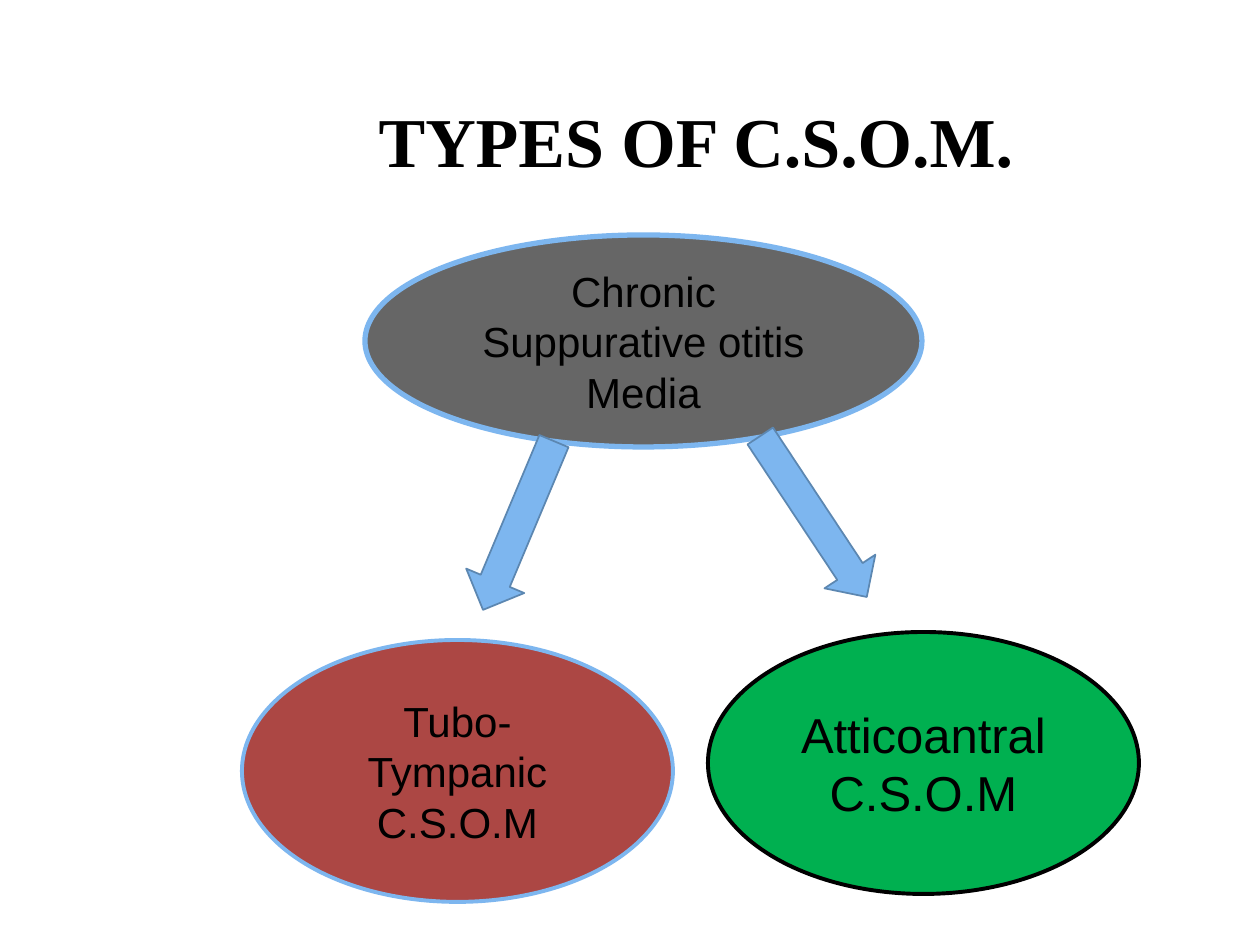
from pptx import Presentation
from pptx import util as u
from pptx.dml.color import RGBColor
from pptx.enum import shapes, text

PX = 914400 // 126  # EMU per pixel


def color(value):
    return RGBColor.from_string(value)


def add_text(frame, wording, size, font, bold=False):
    frame.word_wrap = True
    paragraph = frame.paragraphs[0]
    paragraph.alignment = text.PP_ALIGN.CENTER
    run = paragraph.add_run()
    run.text = wording
    run.font.size = u.Pt(size)
    run.font.name = font
    run.font.bold = bold
    run.font.color.rgb = color("000000")


presentation = Presentation()
presentation.slide_width = u.Inches(10)
presentation.slide_height = u.Inches(7.5)
slide = presentation.slides.add_slide(presentation.slide_layouts[6])

# Title
title = slide.shapes.add_textbox(242 * PX, 84 * PX, 908 * PX, 176 * PX)
title.text_frame.margin_top = 14 * PX
add_text(title.text_frame, "TYPES OF C.S.O.M.", 40, "Times New Roman", True)

# Disease on top, arrows down to its two types (back to front)
OVAL = shapes.MSO_SHAPE.OVAL
ARROW = shapes.MSO_SHAPE.RIGHT_ARROW
diagram = [
    # kind, box in px, rotation, fill, line, line width, wording, text size
    (OVAL, (365, 235, 557, 212), 0, "666666", "7DB6EF", 3,
     "Chronic Suppurative otitis Media", 24),
    (ARROW, (427, 494, 183, 63), 112.8, "7DB6EF", "5C87B1", 1, "", 0),
    (ARROW, (717, 486, 193, 61), 56.5, "7DB6EF", "5C87B1", 1, "", 0),
    (OVAL, (242, 640, 431, 262), 0, "AC4744", "7DB6EF", 2.25,
     "Tubo-Tympanic C.S.O.M", 24),
    (OVAL, (708, 632, 431, 262), 0, "00B050", "000000", 2.25,
     "Atticoantral C.S.O.M", 28),
]
for kind, box, rotation, fill, line, width, wording, size in diagram:
    shape = slide.shapes.add_shape(kind, *(length * PX for length in box))
    shape.shadow.inherit = False
    shape.rotation = rotation
    shape.fill.solid()
    shape.fill.fore_color.rgb = color(fill)
    shape.line.color.rgb = color(line)
    shape.line.width = u.Pt(width)
    if wording:
        shape.text_frame.vertical_anchor = text.MSO_ANCHOR.MIDDLE
        add_text(shape.text_frame, wording, size, "Arial")

presentation.save("out.pptx")
